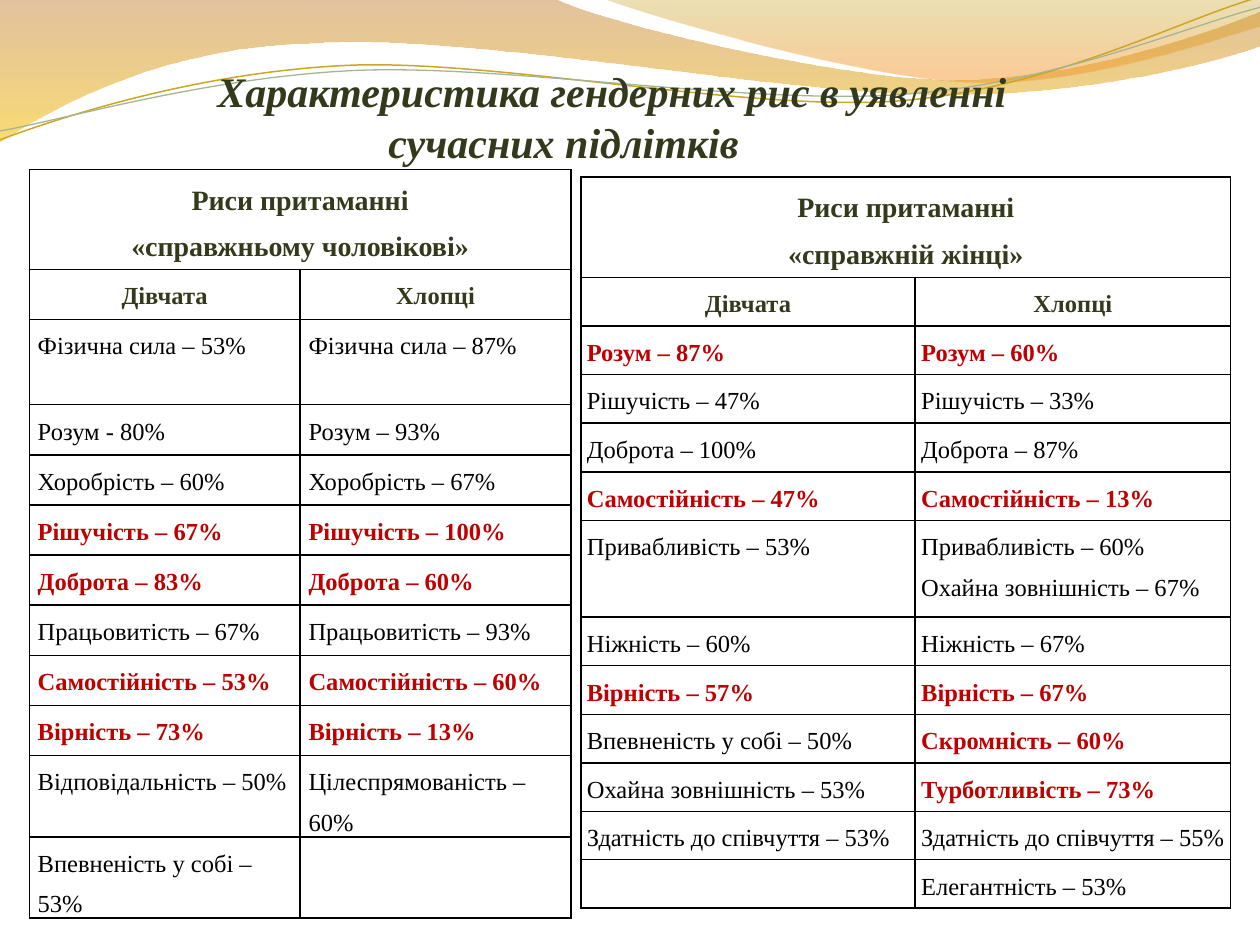
from lxml import etree
from pptx import Presentation
from pptx import util as u
from pptx.dml import color
from pptx.enum import text
from pptx.oxml import ns

COLORS = {"olive": "333A1C", "red": "C00000", "black": "000000",
          "brown": "C07A28", "yellow": "F7BF00", "khaki": "C09709",
          "orange": "F59320", "gold": "CCA624", "sage": "A5B592"}

BANDS = [
    ([(0, 0), (11.18, -0.03), (12.09, 0.43, 16.87, 1.6, 19.25, 1.6),
      (21.67, 1.6, 24.33, 0.66, 25.4, 0.23), (25.43, 0.91),
      (24.97, 1.12, 22.1, 1.93, 18.95, 1.91), (15.8, 1.91, 9.7, 0.71, 6.53, 0.86),
      (3.28, 0.91, 1.17, 2.11, -0.03, 2.87), (0, 0)],
     [(0, "brown", 45), (1, "yellow", 55)]),
    ([(12.17, -0.03), (12.93, 0.28, 17.32, 1.57, 19.53, 1.65),
      (21.74, 1.75, 24.41, 0.81, 25.4, 0.53), (25.4, 0), (12.17, -0.03)],
     [(0, "khaki", 30), (0.8, "orange", 45)]),
]
STRANDS = [
    ([(-0.05, 2.22), (1.19, 1.82, 4.01, 1.04, 7.05, 1.05),
      (10.05, 1.07, 15.02, 2.37, 18.08, 2.29), (21.13, 2.2, 23.86, 0.91, 25.41, 0.55)],
     "gold", 0.85),
    ([(-0.04, 2.04), (1.16, 1.9, 4.17, 1.15, 7.2, 1.16),
      (10.25, 1.18, 15.13, 2.25, 18.19, 2.16), (21.22, 2.1, 23.93, 1.06, 25.45, 0.75)],
     "sage", 0.75),
]

MARK = "*"
MAN_TRAITS = [
    ("Фізична сила – 53%", "Фізична сила – 87%"),
    ("Розум - 80%", "Розум – 93%"),
    ("Хоробрість – 60%", "Хоробрість – 67%"),
    ("*Рішучість – 67%", "*Рішучість – 100%"),
    ("*Доброта – 83%", "*Доброта – 60%"),
    ("Працьовитість – 67%", "Працьовитість – 93%"),
    ("*Самостійність – 53%", "*Самостійність – 60%"),
    ("*Вірність – 73%", "*Вірність – 13%"),
    ("Відповідальність – 50%", "Цілеспрямованість – 60%"),
    ("Впевненість у собі – 53%", ""),
]
WOMAN_TRAITS = [
    ("*Розум – 87%", "*Розум – 60%"),
    ("Рішучість – 47%", "Рішучість – 33%"),
    ("Доброта – 100%", "Доброта – 87%"),
    ("*Самостійність – 47%", "*Самостійність – 13%"),
    ("Привабливість – 53%", "Привабливість – 60%\nОхайна зовнішність – 67%"),
    ("Ніжність – 60%", "Ніжність – 67%"),
    ("*Вірність – 57%", "*Вірність – 67%"),
    ("Впевненість у собі – 50%", "*Скромність – 60%"),
    ("Охайна зовнішність – 53%", "*Турботливість – 73%"),
    ("Здатність до співчуття – 53%", "Здатність до співчуття – 55%"),
    ("", "Елегантність – 53%"),
]


def rgb(name):
    return color.RGBColor.from_string(COLORS[name])


def write(tf, content, size=14, fill="black", bold=False, italic=False,
          align=text.PP_ALIGN.LEFT, spacing=1.5):
    for i, line in enumerate(content.split("\n")):
        p = tf.add_paragraph() if i else tf.paragraphs[0]
        p.alignment, p.line_spacing = align, spacing
        r = p.add_run()
        r.text = line
        r.font.name, r.font.size = "Times New Roman", u.Pt(size)
        r.font.bold, r.font.italic = bold, italic
        r.font.color.rgb = rgb(fill)


def add_curve(s, left, top, parts, close):
    points = [(u.Cm(left + x), u.Cm(top + y))
              for part in parts for x, y in zip(part[::2], part[1::2])]
    builder = s.shapes.build_freeform(*points[0])
    builder.add_line_segments(points[1:], close=close)
    sp = builder.convert_to_shape()
    sp.shadow.inherit = False
    segments = iter(list(sp.element.iter(ns.qn("a:lnTo"))))
    for part in parts[1:]:
        first = next(segments)
        if len(part) == 6:
            first.tag_name = None
            bezier = etree.Element(ns.qn("a:cubicBezTo"))
            first.addprevious(bezier)
            for segment in (first, next(segments), next(segments)):
                bezier.append(segment[0])
                segment.getparent().remove(segment)
    return sp


def add_waves(s, left, top):
    for parts, stops in BANDS:
        sp = add_curve(s, left, top, parts, True)
        sp.fill.gradient()
        sp.fill.gradient_angle = 270
        for stop, (position, name, _) in zip(sp.fill.gradient_stops, stops):
            stop.position, stop.color.rgb = position, rgb(name)
        tints = list(sp.element.spPr.iter(ns.qn("a:srgbClr")))
        for tint, (_, _, opacity) in zip(tints, stops):
            etree.SubElement(tint, ns.qn("a:alpha"), val=str(opacity * 1000))
        sp.line.fill.background()
    for parts, name, width in STRANDS:
        sp = add_curve(s, left, top, parts, False)
        sp.rotation = 357.3
        sp.fill.background()
        sp.line.color.rgb, sp.line.width = rgb(name), u.Pt(width)


def add_title(s, left, top, width, height):
    sp = s.shapes.title
    sp.left, sp.top, sp.width, sp.height = map(u.Cm, (left, top, width, height))
    tf = sp.text_frame
    tf.word_wrap, tf.auto_size = True, text.MSO_AUTO_SIZE.NONE
    tf.vertical_anchor = text.MSO_ANCHOR.MIDDLE
    write(tf, "Характеристика гендерних рис в уявленні сучасних підлітків", size=24,
          fill="olive", bold=True, italic=True, align=text.PP_ALIGN.CENTER, spacing=1.0)
    p_pr = tf.paragraphs[0]._p.get_or_add_pPr()
    p_pr.set("marL", "0")
    p_pr.set("indent", str(u.Cm(1.95)))
    sp.element.getparent().append(sp.element)


def format_cell(cell, inset):
    cell.margin_left = cell.margin_right = u.Cm(inset)
    cell.margin_top = cell.margin_bottom = 0
    tc_pr = cell._tc.get_or_add_tcPr()
    for side in ("lnL", "lnR", "lnT", "lnB"):
        ln = etree.SubElement(tc_pr, ns.qn("a:" + side), w=str(u.Pt(1)))
        solid = etree.SubElement(ln, ns.qn("a:solidFill"))
        etree.SubElement(solid, ns.qn("a:srgbClr"), val=COLORS["black"])
    cell.fill.background()


def add_traits(s, left, top, heading, traits, widths, heights, inset):
    rows = [(heading, ""), ("Дівчата", "Хлопці")] + traits
    box = map(u.Cm, (left, top, sum(widths), sum(heights)))
    table = s.shapes.add_table(len(rows), 2, *box).table
    table.first_row = table.horz_banding = False
    for column, width in zip(table.columns, widths):
        column.width = u.Cm(width)
    for row, height in zip(table.rows, heights):
        row.height = u.Cm(height)
    table.cell(0, 0).merge(table.cell(0, 1))
    for i, row in enumerate(rows):
        for j, content in enumerate(row):
            cell = table.cell(i, j)
            format_cell(cell, inset)
            if not content:
                continue
            if i < 2:
                write(cell.text_frame, content, size=14 if i else 16, fill="olive",
                      bold=True, align=text.PP_ALIGN.CENTER)
            else:
                marked = content.startswith(MARK)
                write(cell.text_frame, content.lstrip(MARK), bold=marked,
                      fill="red" if marked else "black")


def main():
    prs = Presentation()
    prs.slide_width, prs.slide_height = u.Cm(25.4), u.Cm(19.05)
    s = prs.slides.add_slide(prs.slide_layouts[5])
    add_waves(s, 0, 0)
    add_traits(s, 0.59, 3.42, "Риси притаманні\n«справжньому чоловікові»", MAN_TRAITS,
               [5.46, 5.46], [2.01, 1.01, 1.72] + [1.01] * 7 + [1.64] * 2, 0.17)
    add_title(s, 0.59, 1.19, 21.54, 2.31)
    add_traits(s, 11.71, 3.57, "Риси притаманні\n«справжній жінці»", WOMAN_TRAITS,
               [6.74, 6.36], [2.02] + [0.98] * 5 + [1.95] + [0.98] * 4 + [0.97] * 2, 0.12)
    prs.save("out.pptx")


if __name__ == "__main__":
    main()
